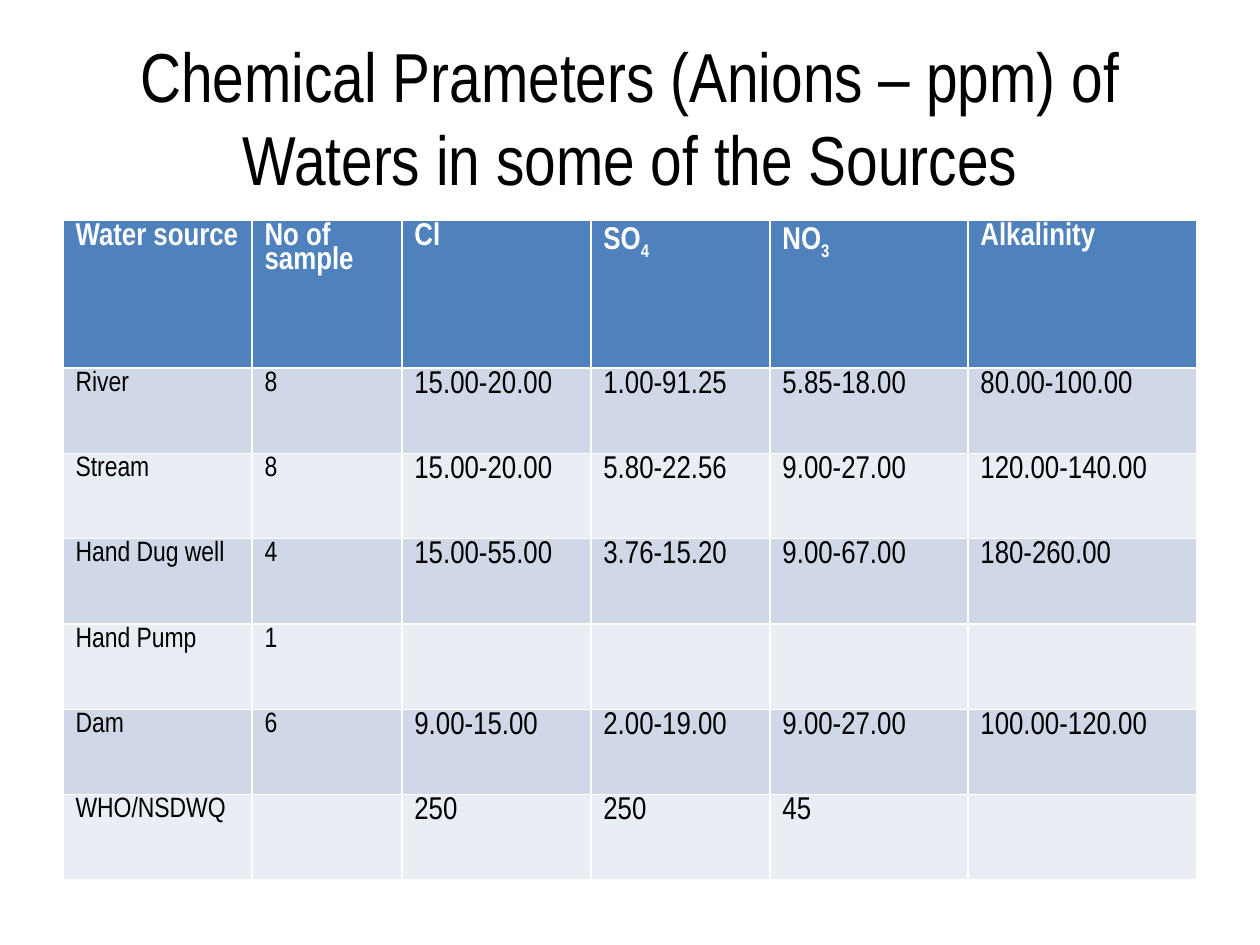
"""Build a slide with a table of anion levels by water source."""
import pptx
import pptx.dml.color
import pptx.enum.text
import pptx.util

Cm = pptx.util.Cm
Pt = pptx.util.Pt
RGBColor = pptx.dml.color.RGBColor

TITLE = "Chemical Prameters (Anions – ppm) of Waters in some of the Sources"
HEADS = [("Water source",), ("No of sample",), ("Cl",), ("SO", "4"), ("NO", "3"), ("Alkalinity",)]
ROWS = [
    ("River", "8", "15.00-20.00", "1.00-91.25", "5.85-18.00", "80.00-100.00"),
    ("Stream", "8", "15.00-20.00", "5.80-22.56", "9.00-27.00", "120.00-140.00"),
    ("Hand Dug well", "4", "15.00-55.00", "3.76-15.20", "9.00-67.00", "180-260.00"),
    ("Hand Pump", "1", "", "", "", ""),
    ("Dam", "6", "9.00-15.00", "2.00-19.00", "9.00-27.00", "100.00-120.00"),
    ("WHO/NSDWQ", "", "250", "250", "45", ""),
]
WIDTHS = [3.81, 3.02, 3.81, 3.61, 3.99, 4.62]
HEAD_H, ROW_H = 2.97, 1.72
LEFT = 1.27
FONT = "Arial Narrow"
BLACK = RGBColor(0x00, 0x00, 0x00)
WHITE = RGBColor(0xFF, 0xFF, 0xFF)
BLUE = RGBColor(0x4F, 0x81, 0xBD)
BANDS = [RGBColor(0xD0, 0xD8, 0xE8), RGBColor(0xE9, 0xED, 0xF4)]


def style(run, size, color, bold=False):
    """Set the font of a run."""
    font = run.font
    font.name, font.size, font.bold = FONT, Pt(size), bold
    font.color.rgb = color


def write(cell, parts, fill, size, color, bold=False):
    """Fill a cell; a second part is set as a subscript."""
    cell.fill.solid()
    cell.fill.fore_color.rgb = fill
    para = cell.text_frame.paragraphs[0]
    para.line_spacing = 0.8
    for i, part in enumerate(parts):
        if part:
            run = para.add_run()
            run.text = part
            style(run, size, color, bold)
            if i:
                run.font._element.set("baseline", "-25000")


def add_title(slide):
    """Place and format the title."""
    title = slide.shapes.title
    title.left, title.top = Cm(LEFT), Cm(0.76)
    title.width, title.height = Cm(sum(WIDTHS)), Cm(3.18)
    frame = title.text_frame
    frame.text = TITLE
    frame.vertical_anchor = pptx.enum.text.MSO_ANCHOR.MIDDLE
    para = frame.paragraphs[0]
    para.alignment = pptx.enum.text.PP_ALIGN.CENTER
    style(para.runs[0], 39.6, BLACK)


def add_grid(slide):
    """Add the table of values."""
    high = HEAD_H + ROW_H * len(ROWS)
    table = slide.shapes.add_table(
        len(ROWS) + 1, len(HEADS), Cm(LEFT), Cm(4.45), Cm(sum(WIDTHS)), Cm(high)
    ).table
    for col, width in zip(table.columns, WIDTHS):
        col.width = Cm(width)
    for i, row in enumerate(table.rows):
        row.height = Cm(ROW_H if i else HEAD_H)
    for c, parts in enumerate(HEADS):
        write(table.cell(0, c), parts, BLUE, 18, WHITE, True)
    for r, row in enumerate(ROWS):
        for c, text in enumerate(row):
            size = 16 if c < 2 else 18
            write(table.cell(r + 1, c), [text], BANDS[r % 2], size, BLACK)


def main():
    """Build and save the slide."""
    deck = pptx.Presentation()
    deck.slide_width, deck.slide_height = Cm(25.4), Cm(19.05)
    slide = deck.slides.add_slide(deck.slide_layouts[5])
    add_title(slide)
    add_grid(slide)
    deck.save("out.pptx")


if __name__ == "__main__":
    main()
